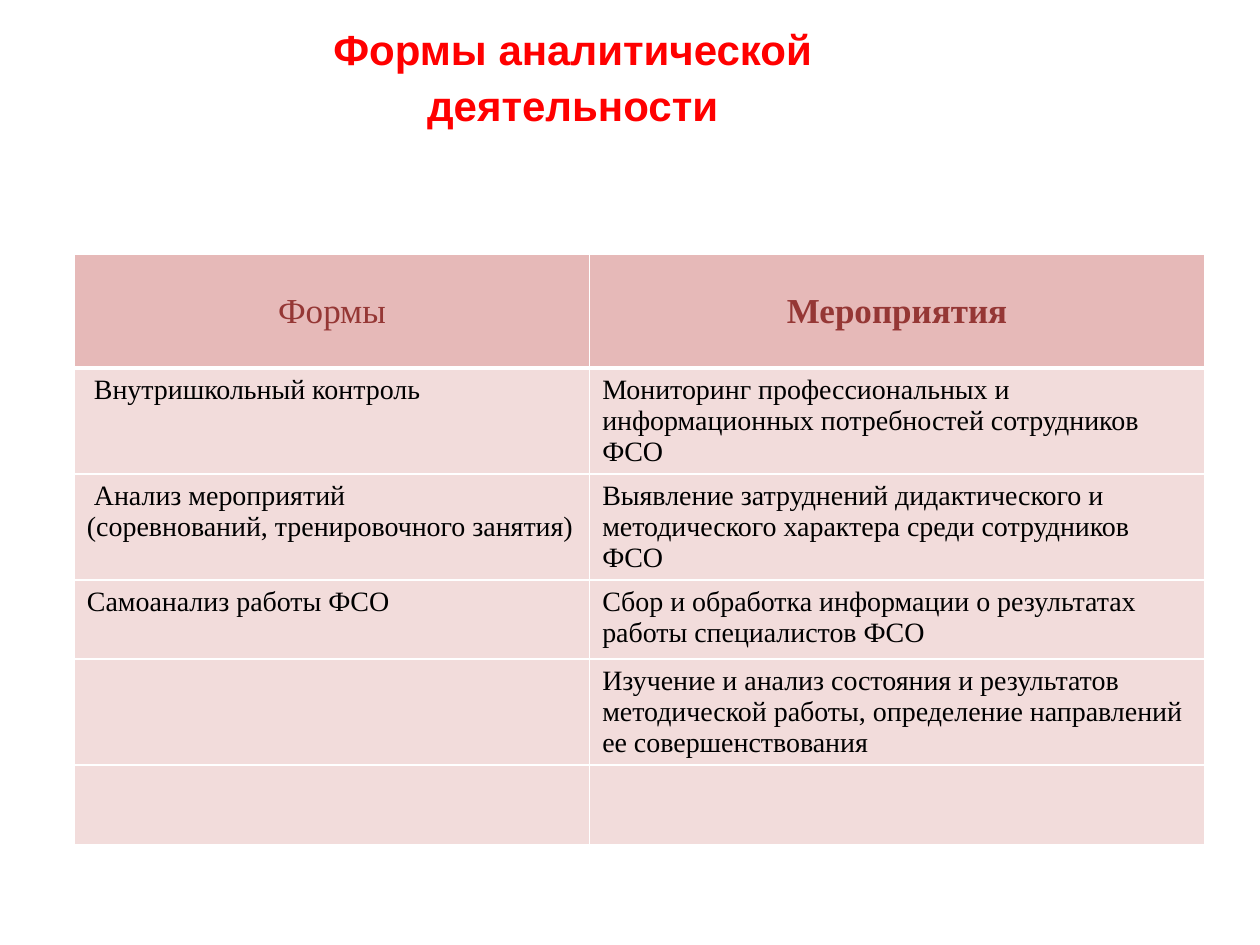
from lxml.etree import SubElement
from pptx import Presentation
from pptx.dml.color import RGBColor
from pptx.enum.text import MSO_ANCHOR, MSO_AUTO_SIZE, PP_ALIGN
from pptx.oxml.ns import qn
from pptx.util import Inches, Pt

RED = RGBColor(0xFF, 0x00, 0x00)
BLACK = RGBColor(0x00, 0x00, 0x00)
MAROON = RGBColor(0x95, 0x37, 0x35)
ROSE = RGBColor(0xE6, 0xB9, 0xB8)
PALE_ROSE = RGBColor(0xF2, 0xDC, 0xDB)

COL_WIDTHS = (4.09, 4.88)
ROW_HEIGHTS = (0.9, 0.84, 0.84, 0.63, 0.84, 0.63)
ROWS = (
    ("Формы", "Мероприятия"),
    (" Внутришкольный контроль",
     "Мониторинг профессиональных и информационных потребностей сотрудников ФСО"),
    (" Анализ мероприятий\v(соревнований, тренировочного занятия)",
     "Выявление затруднений дидактического и методического характера "
     "среди сотрудников ФСО"),
    ("Самоанализ работы ФСО",
     "Сбор и обработка информации о результатах работы специалистов ФСО"),
    ("", "Изучение и анализ состояния и результатов методической работы, "
         "определение направлений ее совершенствования"),
    ("", ""),
)


def style_font(font, name, size, color, bold=False):
    font.name, font.size, font.bold = name, Pt(size), bold
    font.color.rgb = color


def add_title(slide, text):
    title = slide.shapes.title
    title.left, title.top = Inches(-0.12), Inches(0.21)
    title.width, title.height = Inches(9.33), Inches(0.9)
    tf = title.text_frame
    tf.text = text
    tf.word_wrap = True
    tf.auto_size = MSO_AUTO_SIZE.NONE
    tf.vertical_anchor = MSO_ANCHOR.MIDDLE
    tf.margin_top, tf.margin_bottom = 0, Inches(0.14)
    p = tf.paragraphs[0]
    p.alignment = PP_ALIGN.CENTER
    p.line_spacing = Pt(32)
    for r in p.runs:
        style_font(r.font, "Arial", 24, RED, bold=True)


def set_borders(cell, bottom):
    """Draw white cell borders, 1 pt wide except for the bottom one."""
    tc_pr = cell._tc.get_or_add_tcPr()
    widths = {"a:lnL": 1, "a:lnR": 1, "a:lnT": 1, "a:lnB": bottom}
    for i, (tag, width) in enumerate(widths.items()):
        ln = SubElement(tc_pr, qn(tag), w=str(Pt(width)))
        fill = SubElement(ln, qn("a:solidFill"))
        SubElement(fill, qn("a:srgbClr"), val="FFFFFF")
        tc_pr.insert(i, ln)


def fill_cell(cell, text, header, bold):
    cell.fill.solid()
    cell.fill.fore_color.rgb = ROSE if header else PALE_ROSE
    set_borders(cell, bottom=3 if header else 1)
    cell.vertical_anchor = MSO_ANCHOR.MIDDLE if header else MSO_ANCHOR.TOP
    cell.text_frame.text = text
    p = cell.text_frame.paragraphs[0]
    p.alignment = PP_ALIGN.CENTER if header else PP_ALIGN.LEFT
    size, color = (20, MAROON) if header else (16, BLACK)
    for r in p.runs:
        style_font(r.font, "Times New Roman", size, color, bold)


def add_forms_table(slide):
    table = slide.shapes.add_table(
        len(ROWS), len(COL_WIDTHS), Inches(0.59), Inches(2.02),
        Inches(sum(COL_WIDTHS)), Inches(sum(ROW_HEIGHTS))).table
    table.horz_banding = False
    for col, width in zip(table.columns, COL_WIDTHS):
        col.width = Inches(width)
    for row, height in zip(table.rows, ROW_HEIGHTS):
        row.height = Inches(height)
    for i, texts in enumerate(ROWS):
        for j, text in enumerate(texts):
            header = i == 0
            fill_cell(table.cell(i, j), text, header, bold=header and j == 1)


def main():
    prs = Presentation()
    prs.slide_width, prs.slide_height = Inches(10), Inches(7.5)
    slide = prs.slides.add_slide(prs.slide_layouts[5])
    add_title(slide, "Формы аналитической\vдеятельности")
    add_forms_table(slide)
    prs.save("out.pptx")


if __name__ == "__main__":
    main()
